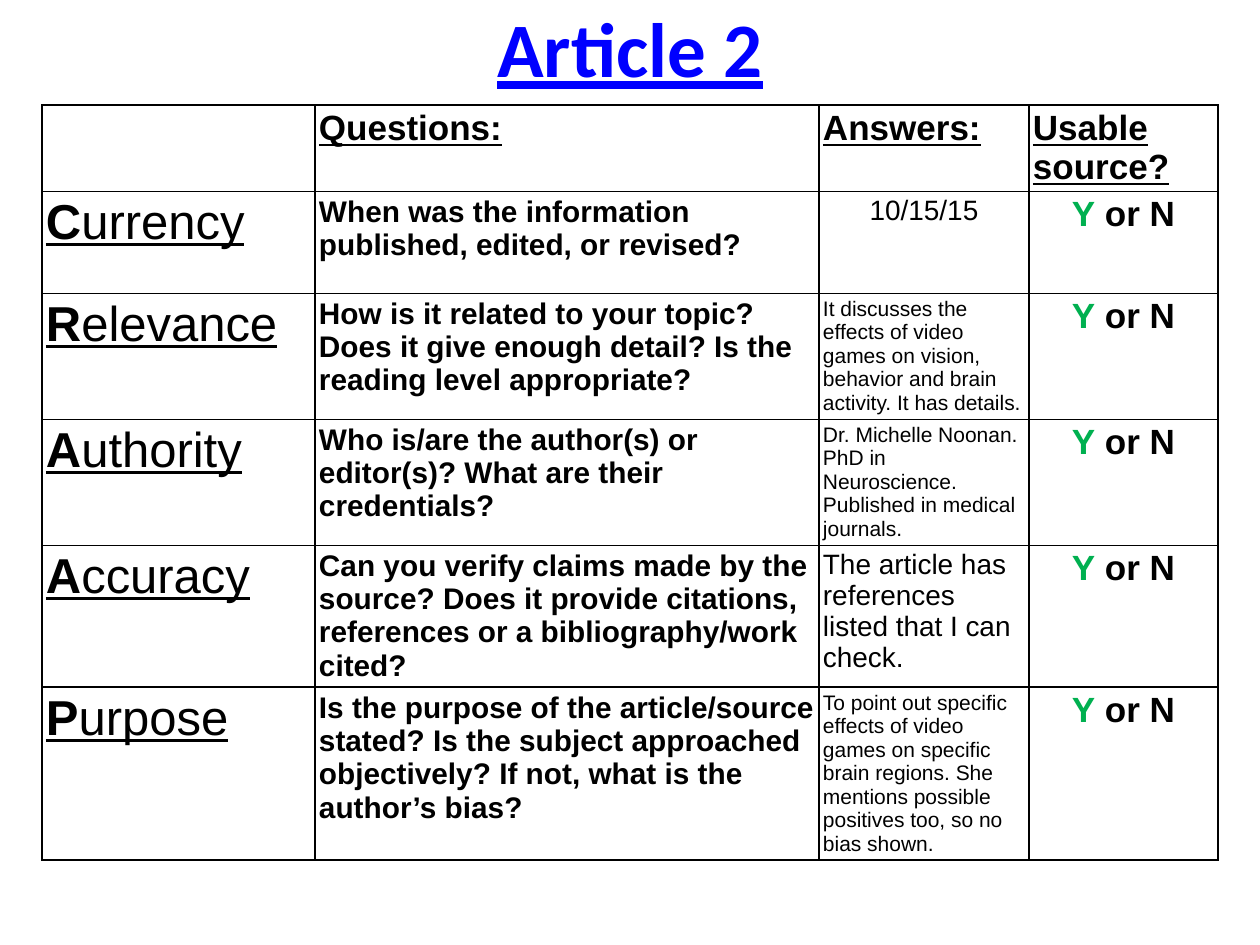
import pptx
import pptx.util
import pptx.dml.color
import pptx.enum.text
import pptx.oxml
import pptx.oxml.ns

COLORS = {"title": "0000FF", "text": "000000", "yes": "00B050", "border": "000000"}
PX = 914400 / 126
ALIGN = pptx.enum.text.PP_ALIGN

HEADERS = ["Questions:", "Answers:", "Usable source?"]
CRITERIA = [
    ("Currency", "When was the information published, edited, or revised?",
     "10/15/15", 16, ALIGN.CENTER),
    ("Relevance", "How is it related to your topic? Does it give enough detail? "
     "Is the reading level appropriate?",
     "It discusses the effects of video games on vision, behavior and brain "
     "activity. It has details.", 12, ALIGN.LEFT),
    ("Authority", "Who is/are the author(s) or editor(s)? What are their credentials?",
     "Dr. Michelle Noonan. PhD in Neuroscience. Published in medical journals.",
     12, ALIGN.LEFT),
    ("Accuracy", "Can you verify claims made by the source? Does it provide "
     "citations, references or a bibliography/work cited?",
     "The article has references listed that I can check.", 16, ALIGN.LEFT),
    ("Purpose", "Is the purpose of the article/source stated? Is the subject "
     "approached objectively? If not, what is the author’s bias?",
     "To point out specific effects of video games on specific brain regions. "
     "She mentions possible positives too, so no bias shown.", 12, ALIGN.LEFT),
]
COLUMNS = [273, 504, 210, 189]
ROWS = [86, 102, 126, 126, 142, 173]


def px(n):
    return pptx.util.Emu(round(n * PX))


def rgb(name):
    return pptx.dml.color.RGBColor.from_string(COLORS[name])


class Deck:
    font = "Arial"
    margin = 4
    border = pptx.util.Pt(0.75)

    def __init__(self, width, height):
        self.prs = pptx.Presentation()
        self.prs.slide_width, self.prs.slide_height = px(width), px(height)
        self.s = self.prs.slides.add_slide(self.prs.slide_layouts[5])

    def style(self, font, size, color="text", bold=False, underline=False, name=None):
        font.name = name or self.font
        font.size = pptx.util.Pt(size)
        font.bold, font.underline = bold, underline
        font.color.rgb = rgb(color)

    def title(self, text, x, y, w, h):
        sp = self.s.shapes.title
        sp.left, sp.top, sp.width, sp.height = map(px, (x, y, w, h))
        tf = sp.text_frame
        tf.text = text
        tf.word_wrap = True
        tf.auto_size = pptx.enum.text.MSO_AUTO_SIZE.NONE
        tf.vertical_anchor = pptx.enum.text.MSO_ANCHOR.MIDDLE
        tf.margin_left = tf.margin_right = tf.margin_top = tf.margin_bottom = px(13)
        p = tf.paragraphs[0]
        p.alignment = ALIGN.CENTER
        self.style(p.font, 44, "title", True, True, "Calibri")

    def table(self, x, y, columns, rows):
        frame = self.s.shapes.add_table(len(rows), len(columns), px(x), px(y),
                                        px(sum(columns)), px(sum(rows)))
        table = frame.table
        table.first_row = table.horz_banding = False
        for column, width in zip(table.columns, columns):
            column.width = px(width)
        for row, height in zip(table.rows, rows):
            row.height = px(height)
        for cell in table.iter_cells():
            self.cell_box(cell)
        return table

    def cell_box(self, cell):
        cell.margin_left = cell.margin_right = px(self.margin)
        cell.margin_top = cell.margin_bottom = px(self.margin)
        cell.fill.background()
        tcPr = cell._tc.get_or_add_tcPr()
        for i, side in enumerate(("lnL", "lnR", "lnT", "lnB")):
            tcPr.insert(i, pptx.oxml.parse_xml(
                f'<a:{side} {pptx.oxml.ns.nsdecls("a")} w="{self.border}">'
                f'<a:solidFill><a:srgbClr val="{COLORS["border"]}"/></a:solidFill>'
                f'</a:{side}>'))

    def cell_text(self, cell, text, size, align=ALIGN.LEFT, **style):
        p = cell.text_frame.paragraphs[0]
        p.text = text
        p.alignment = align
        self.style(p.font, size, **style)

    def cell_runs(self, cell, runs, size, align=ALIGN.LEFT):
        p = cell.text_frame.paragraphs[0]
        p.alignment = align
        for text, style in runs:
            r = p.add_run()
            r.text = text
            self.style(r.font, size, **style)


def main():
    deck = Deck(1260, 945)
    deck.title("Article 2", 63, 10, 1134, 73)
    table = deck.table(42, 105, COLUMNS, ROWS)
    for col, text in enumerate(HEADERS, 1):
        deck.cell_text(table.cell(0, col), text, 20, bold=True, underline=True)
    for row, (name, question, answer, size, align) in enumerate(CRITERIA, 1):
        deck.cell_runs(table.cell(row, 0),
                       [(name[0], {"bold": True, "underline": True}),
                        (name[1:], {"underline": True})], 28)
        deck.cell_text(table.cell(row, 1), question, 17, bold=True)
        deck.cell_text(table.cell(row, 2), answer, size, align)
        deck.cell_runs(table.cell(row, 3),
                       [("Y", {"color": "yes", "bold": True}),
                        (" or N", {"bold": True})], 20, ALIGN.CENTER)
    deck.prs.save("out.pptx")


if __name__ == "__main__":
    main()
